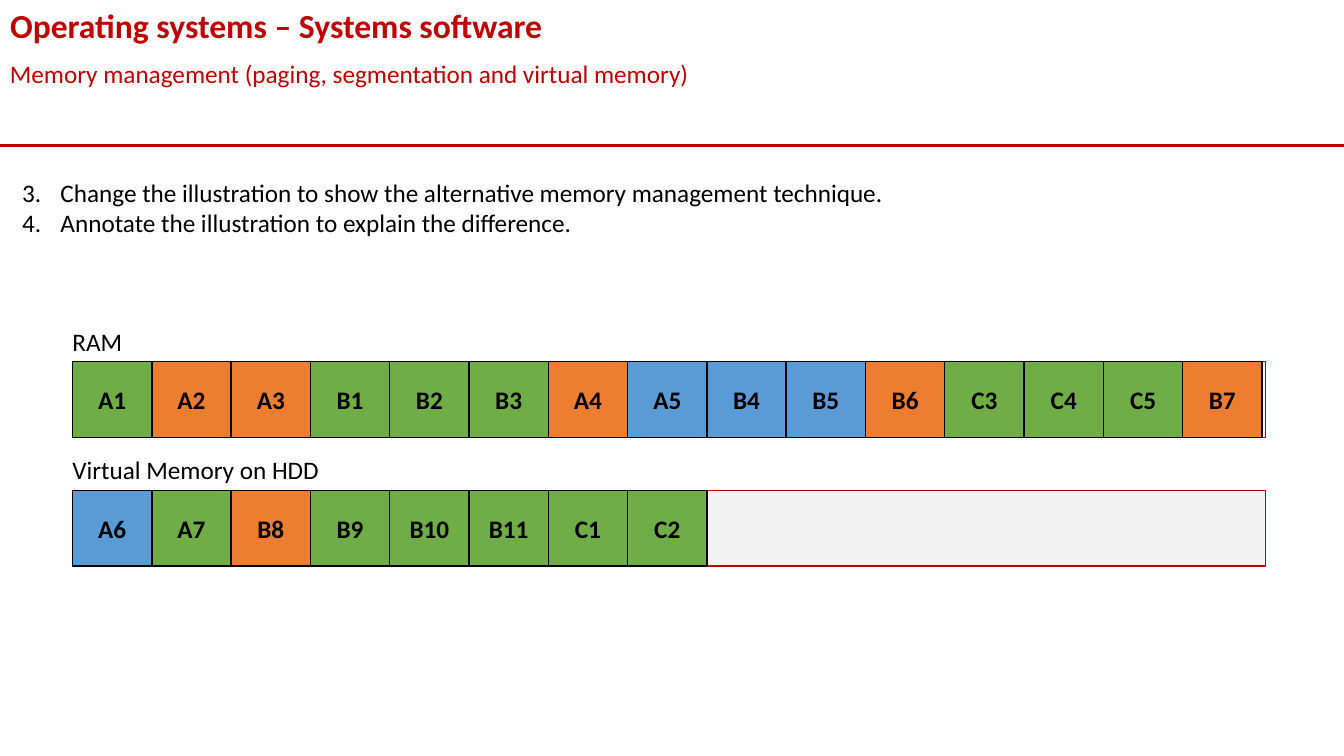
import dataclasses
import typing

import lxml.etree
import pptx
import pptx.dml.color
import pptx.enum.shapes
import pptx.enum.text
import pptx.oxml.ns
import pptx.shapes.base
import pptx.slide
import pptx.util

WIDE = pptx.util.Inches(13.33)
HIGH = pptx.util.Inches(7.5)
HUES = {
    "red": "C00000",
    "black": "000000",
    "grey": "F2F2F2",
    "G": "70AD47",
    "O": "ED7D31",
    "B": "5B9BD5",
}
LEFT = 5.4
STEP = 5.9
SPAN = 88.75
TALL = 10
ANCHOR = pptx.enum.text.MSO_ANCHOR
ALIGN = pptx.enum.text.PP_ALIGN
PLAIN = {"name": "Calibri", "size": pptx.util.Pt(18), "bold": False}
BOLD = PLAIN | {"bold": True}
HEAD = BOLD | {"size": pptx.util.Pt(24)}
FRAME = {
    "word_wrap": True,
    "auto_size": pptx.enum.text.MSO_AUTO_SIZE.NONE,
    "vertical_anchor": ANCHOR.TOP,
}
LOOSE = FRAME | {"word_wrap": False}
MIDDLE = FRAME | {"vertical_anchor": ANCHOR.MIDDLE}


@dataclasses.dataclass(frozen=True)
class Box:
    left: float
    top: float
    width: float
    height: float

    def sides(self) -> dict[str, int]:
        return {
            "left": round(WIDE * self.left / 100),
            "top": round(HIGH * self.top / 100),
            "width": round(WIDE * self.width / 100),
            "height": round(HIGH * self.height / 100),
        }


@dataclasses.dataclass(frozen=True)
class Store:
    label: str
    width: float
    top: float
    pages: str
    tints: str


STORES = [
    Store("RAM", 5.25, 47.85, "A1 A2 A3 B1 B2 B3 A4 A5 B4 B5 B6 C3 C4 C5 B7",
          "GOOGGGOBBBOGGGO"),
    Store("Virtual Memory on HDD", 20.5, 64.85, "A6 A7 B8 B9 B10 B11 C1 C2",
          "BGOGGGGG"),
]
TASKS = [
    "Change the illustration to show the alternative memory management technique.",
    "Annotate the illustration to explain the difference.",
]


def tint(name: str) -> pptx.dml.color.RGBColor:
    return pptx.dml.color.RGBColor.from_string(HUES[name])


def apply(item: typing.Any, form: dict[str, typing.Any]) -> None:
    for name, value in form.items():
        setattr(item, name, value)


def write(shape: pptx.shapes.base.BaseShape, lines: list[str], font: dict,
          hue: str, frame: dict, align: ALIGN = ALIGN.LEFT) -> None:
    body = shape.text_frame
    apply(body, frame)
    body.text = "\n".join(lines)
    for para in body.paragraphs:
        apply(para, {"alignment": align, "space_before": pptx.util.Pt(0)})
        for run in para.runs:
            apply(run.font, font)
            run.font.color.rgb = tint(hue)


def number(shape: pptx.shapes.base.BaseShape, start: int) -> None:
    dent = pptx.util.Inches(0.38)
    for para in shape.text_frame.paragraphs:
        props = para._p.get_or_add_pPr()
        props.set("marL", str(dent))
        props.set("indent", str(-dent))
        face = lxml.etree.SubElement(props, pptx.oxml.ns.qn("a:buFont"))
        face.set("typeface", "+mj-lt")
        mark = lxml.etree.SubElement(props, pptx.oxml.ns.qn("a:buAutoNum"))
        mark.set("type", "arabicPeriod")
        mark.set("startAt", str(start))


def block(slide: pptx.slide.Slide, box: Box, fill: str,
          edge: str) -> pptx.shapes.base.BaseShape:
    kind = pptx.enum.shapes.MSO_SHAPE.RECTANGLE
    shape = slide.shapes.add_shape(kind, **box.sides())
    shape.shadow.inherit = False
    shape.fill.solid()
    shape.fill.fore_color.rgb = tint(fill)
    shape.line.color.rgb = tint(edge)
    shape.line.width = pptx.util.Pt(1)
    return shape


def label(slide: pptx.slide.Slide, box: Box, text: str, hue: str,
          frame: dict) -> None:
    shape = slide.shapes.add_textbox(**box.sides())
    write(shape, [text], PLAIN, hue, frame)


def rule(slide: pptx.slide.Slide, top: float) -> None:
    level = round(HIGH * top / 100)
    kind = pptx.enum.shapes.MSO_CONNECTOR.STRAIGHT
    line = slide.shapes.add_connector(kind, 0, level, WIDE, level)
    line.line.color.rgb = tint("red")
    line.line.width = pptx.util.Pt(2.25)
    lxml.etree.SubElement(line._element.spPr, pptx.oxml.ns.qn("a:effectLst"))


def draw(slide: pptx.slide.Slide, store: Store) -> None:
    block(slide, Box(LEFT, store.top, SPAN, TALL), "grey", "red")
    label(slide, Box(LEFT - 0.75, store.top - 5.4, store.width, 5.4),
          store.label, "black", LOOSE)
    for spot, (page, hue) in enumerate(zip(store.pages.split(), store.tints)):
        box = Box(LEFT + spot * STEP, store.top, STEP, TALL)
        cell = block(slide, box, hue, "black")
        write(cell, [page], BOLD, "black", MIDDLE, ALIGN.CENTER)


def main() -> None:
    deck = pptx.Presentation()
    apply(deck, {"slide_width": WIDE, "slide_height": HIGH})
    slide = deck.slides.add_slide(deck.slide_layouts[1])
    title, tasks = slide.placeholders
    apply(title, Box(0, 0, 100, 6.7).sides())
    write(title, ["Operating systems – Systems software"], HEAD, "red", FRAME)
    apply(tasks, Box(0.9, 22.8, 90, 9.5).sides())
    write(tasks, TASKS, PLAIN, "black", FRAME)
    number(tasks, 3)
    rule(slide, 19.2)
    label(slide, Box(0, 7.1, 100, 5.4),
          "Memory management (paging, segmentation and virtual memory)",
          "red", FRAME)
    for store in STORES:
        draw(slide, store)
    deck.save("out.pptx")


if __name__ == "__main__":
    main()
